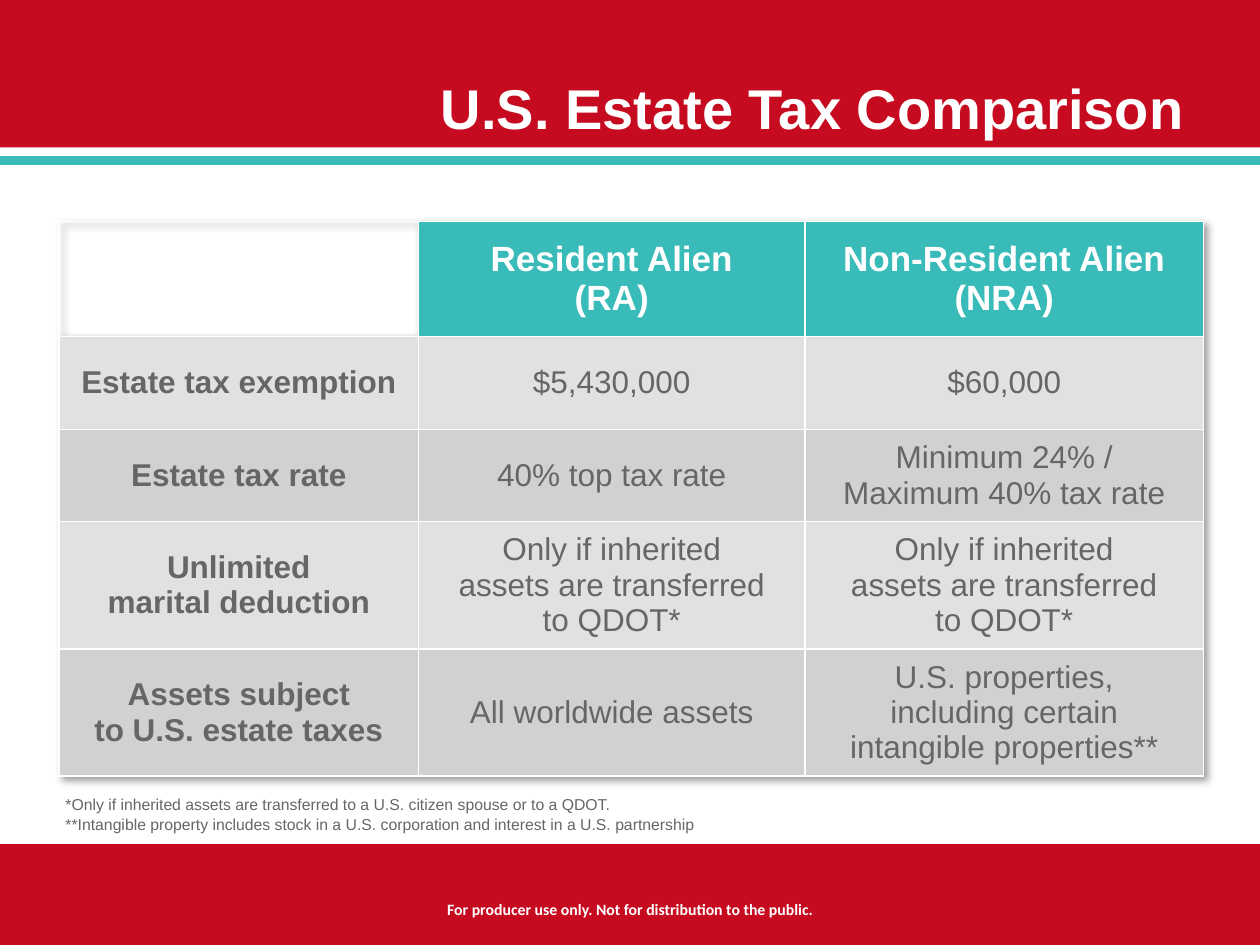
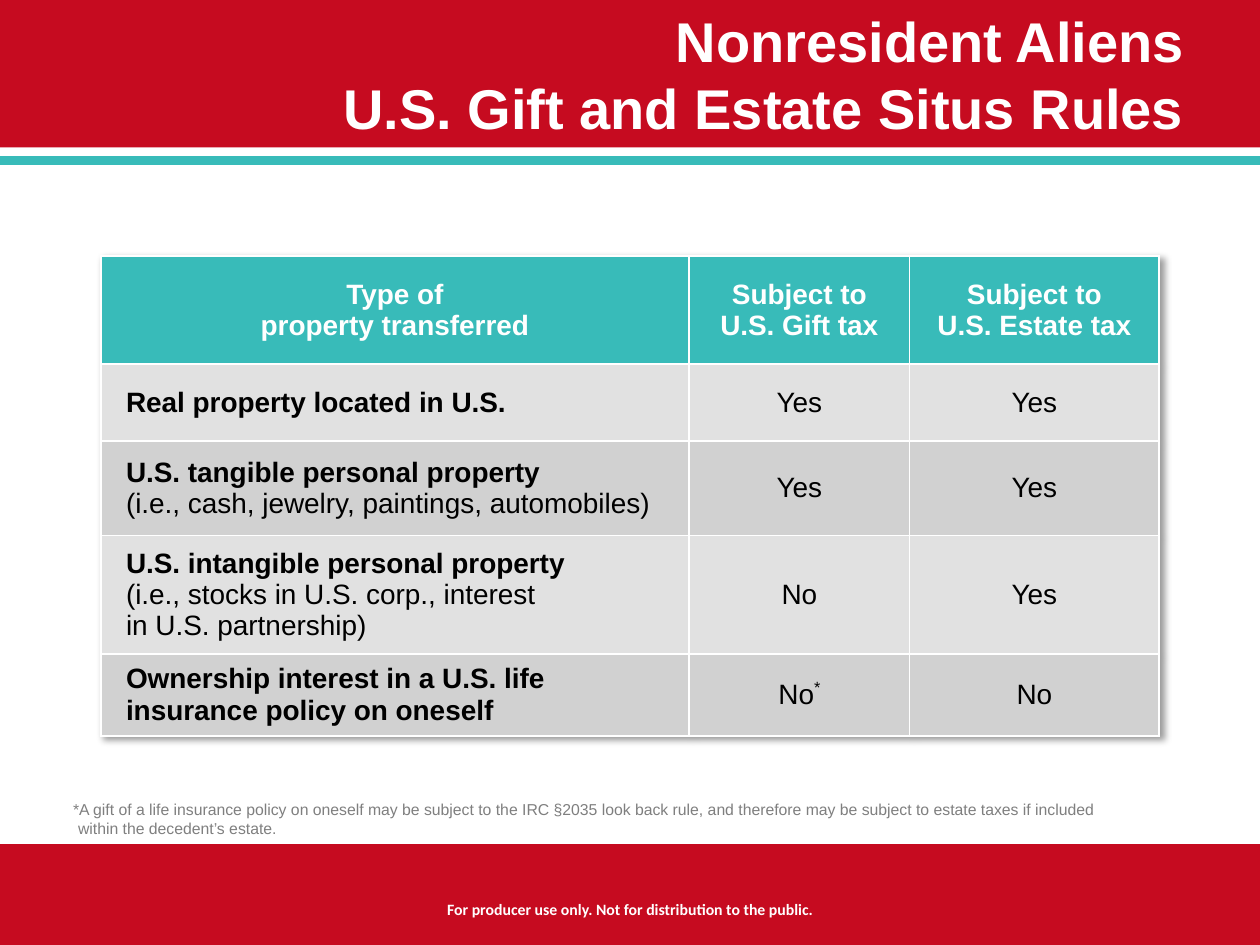
from typing import Any, NamedTuple

from lxml.etree import SubElement as Sub
from pptx import Presentation
from pptx.dml.color import RGBColor as RGB
from pptx.enum.shapes import MSO_SHAPE as Shape
from pptx.enum.text import MSO_ANCHOR as Anchor, PP_ALIGN as Align
from pptx.oxml import parse_xml
from pptx.oxml.ns import nsdecls, qn
from pptx.util import Inches, Pt

RED = RGB(0xC6, 0x0B, 0x20)
TEAL = RGB(0x38, 0xBB, 0xB9)
WHITE = RGB(0xFF, 0xFF, 0xFF)
BLACK = RGB(0x00, 0x00, 0x00)
SLATE = RGB(0x66, 0x66, 0x66)
GRAY = RGB(0x7F, 0x7F, 0x7F)
STRIPES = (RGB(0xE1, 0xE1, 0xE1), RGB(0xD1, 0xD1, 0xD1))

SHADOW = (
    f'<a:effectLst {nsdecls("a")}>'
    '<a:outerShdw blurRad="50800" dist="38100" dir="2700000" algn="tl">'
    '<a:srgbClr val="000000"><a:alpha val="40000"/></a:srgbClr>'
    "</a:outerShdw></a:effectLst>"
)


class Run(NamedTuple):
    text: str
    format: dict[str, Any] = {}
    raised: bool = False


class Band(NamedTuple):
    top: float
    height: float
    color: RGB


class Box(NamedTuple):
    left: float
    top: float
    width: float
    height: float
    anchor: Anchor
    align: Align
    format: dict[str, Any]
    inset: bool = True


class Grid(NamedTuple):
    left: float
    top: float
    cols: list[float]
    rows: list[float]
    head: dict[str, Any]
    body: dict[str, Any]
    label: Align
    indent: float
    side: float
    cells: list[list[Any]]


def font(size: float, color: RGB, bold: bool = False, name: str = "Arial") -> dict[str, Any]:
    return {"size": Pt(size), "color": color, "bold": bold, "name": name}


BANDS = (Band(0, 1.17, RED), Band(1.24, 0.07, TEAL), Band(6.7, 0.8, RED))
TITLE = Box(0.5, 0.04, 9, 1.13, Anchor.BOTTOM, Align.RIGHT, font(32, WHITE, True))
FOOTER = Box(3.01, 7.09, 3.98, 0.25, Anchor.TOP, Align.CENTER,
             font(9, WHITE, True, "Calibri"))
PLAIN = {"bold": False}


def write(para, runs: list[Run], base: dict[str, Any]) -> None:
    """Add the runs to a paragraph, turning each newline into a line break."""
    for run in runs:
        for i, line in enumerate(run.text.split("\n")):
            if i:
                para.add_line_break()
            if not line:
                continue
            part = para.add_run()
            part.text = line
            for key, value in (base | run.format).items():
                if key == "color":
                    part.font.color.rgb = value
                else:
                    setattr(part.font, key, value)
            if run.raised:
                part._r.get_or_add_rPr().set("baseline", "38000")


def add_text(slide, box: Box, *texts: str):
    frame = slide.shapes.add_textbox(
        *map(Inches, (box.left, box.top, box.width, box.height))).text_frame
    frame.word_wrap = True
    frame.vertical_anchor = box.anchor
    if not box.inset:
        for side in ("left", "top", "right", "bottom"):
            setattr(frame, f"margin_{side}", 0)
    for i, text in enumerate(texts):
        para = frame.add_paragraph() if i else frame.paragraphs[0]
        para.alignment = box.align
        if i:
            para.space_before = Pt(0.5)
        write(para, [Run(text)], box.format)
    return frame


def add_rule(cell, side: str) -> None:
    """Draw a white border on one side (L, R, T or B) of a cell."""
    line = Sub(cell._tc.get_or_add_tcPr(), qn(f"a:ln{side}"), w=str(Pt(1)))
    fill = Sub(line, qn("a:solidFill"))
    Sub(fill, qn("a:srgbClr"), val=str(WHITE))


def add_grid(slide, grid: Grid) -> None:
    rows, cols = len(grid.rows), len(grid.cols)
    table = slide.shapes.add_table(
        rows, cols, Inches(grid.left), Inches(grid.top),
        Inches(sum(grid.cols)), Inches(sum(grid.rows))).table
    table.horz_banding = False
    table._tbl.tblPr.insert(0, parse_xml(SHADOW))
    for col, width in zip(table.columns, grid.cols):
        col.width = Inches(width)
    for row, height in zip(table.rows, grid.rows):
        row.height = Inches(height)
    for r, line in enumerate(grid.cells):
        for c, text in enumerate(line):
            cell = table.cell(r, c)
            inner = {"L": c > 0, "R": c < cols - 1, "T": r > 0, "B": r < rows - 1}
            for side, drawn in inner.items():
                if drawn:
                    add_rule(cell, side)
            label = r > 0 and c == 0
            cell.vertical_anchor = Anchor.MIDDLE
            cell.margin_left = Inches(grid.indent if label else grid.side)
            cell.margin_right = Inches(grid.side)
            if not text:
                cell.fill.background()
                continue
            cell.fill.solid()
            cell.fill.fore_color.rgb = STRIPES[(r - 1) % 2] if r else TEAL
            para = cell.text_frame.paragraphs[0]
            para.alignment = grid.label if label else Align.CENTER
            base = grid.body | {"bold": label} if r else grid.head
            write(para, [Run(text)] if isinstance(text, str) else text, base)


def add_slide(deck, title: str):
    slide = deck.slides.add_slide(deck.slide_layouts[6])
    for band in BANDS:
        bar = slide.shapes.add_shape(
            Shape.RECTANGLE, 0, Inches(band.top), deck.slide_width, Inches(band.height))
        bar.shadow.inherit = False
        bar.fill.solid()
        bar.fill.fore_color.rgb = band.color
        bar.line.fill.background()
    add_text(slide, FOOTER, "For producer use only. Not for distribution to the public.")
    add_text(slide, TITLE, title)
    return slide


QDOT = "Only if inherited\nassets are transferred\nto QDOT*"

ESTATE = Grid(
    0.47, 1.76, [2.85, 3.07, 3.16], [0.91, 0.74, 0.73, 1.01, 1.01],
    font(20, WHITE, True), font(18, SLATE), Align.CENTER, 0.1, 0.1,
    [
        ["", "Resident Alien\n(RA)", "Non-Resident Alien (NRA)"],
        ["Estate tax exemption", "$5,430,000", "$60,000"],
        ["Estate tax rate", "40% top tax rate", "Minimum 24% /\nMaximum 40% tax rate"],
        ["Unlimited\nmarital deduction", QDOT, QDOT],
        ["Assets subject\nto U.S. estate taxes", "All worldwide assets",
         "U.S. properties,\nincluding certain\nintangible properties**"],
    ],
)

SITUS = Grid(
    0.8, 2.03, [4.67, 1.75, 1.98], [0.86, 0.61, 0.75, 0.94, 0.65],
    font(16, WHITE, True), font(16, BLACK), Align.LEFT, 0.2, 0.05,
    [
        ["Type of\nproperty transferred", "Subject to\nU.S. Gift tax",
         "Subject to\nU.S. Estate tax"],
        ["Real property located in U.S.", "Yes", "Yes"],
        [[Run("U.S. tangible personal property\n"),
          Run("(i.e., cash, jewelry, paintings, automobiles)", PLAIN)], "Yes", "Yes"],
        [[Run("U.S. intangible personal property\n"),
          Run("(i.e., stocks in U.S. corp., interest\nin U.S. partnership)", PLAIN)],
         "No", "Yes"],
        ["Ownership interest in a U.S. life insurance policy on oneself",
         [Run("No"), Run("*", raised=True)], "No"],
    ],
)


def main() -> None:
    deck = Presentation()
    deck.slide_width, deck.slide_height = Inches(10), Inches(7.5)

    slide = add_slide(deck, "U.S. Estate Tax Comparison")
    add_text(
        slide, Box(0.52, 6.31, 8.83, 0.31, Anchor.MIDDLE, Align.LEFT, font(9, SLATE), False),
        "*Only if inherited assets are transferred to a U.S. citizen spouse or to a QDOT.",
        "**Intangible property includes stock in a U.S. corporation"
        " and interest in a U.S. partnership")
    add_grid(slide, ESTATE)

    slide = add_slide(deck, "Nonresident Aliens\nU.S. Gift and Estate Situs Rules")
    note = add_text(
        slide, Box(0.52, 6.35, 8.83, 0.3, Anchor.BOTTOM, Align.LEFT, font(9, GRAY), False),
        "*A gift of a life insurance policy on oneself may be subject to the IRC §2035"
        " look back rule, and therefore may be subject to estate taxes if included\n"
        "within the decedent’s estate.")
    hang = note.paragraphs[0]._p.get_or_add_pPr()
    hang.set("marL", str(Inches(0.1)))
    hang.set("indent", str(Inches(-0.04)))
    add_grid(slide, SITUS)

    deck.save("out.pptx")


if __name__ == "__main__":
    main()
